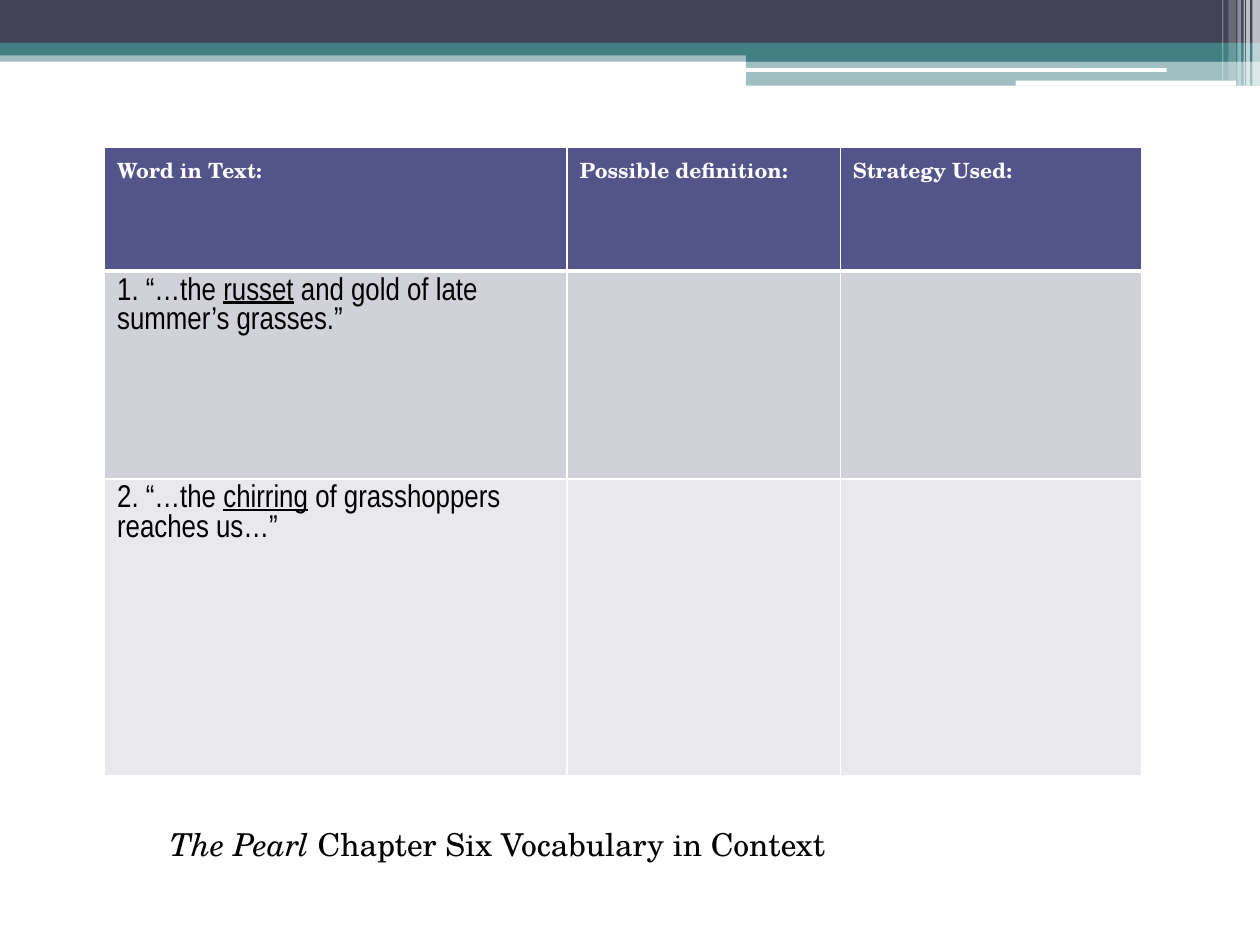
import pptx
import pptx.util
import pptx.dml.color
import pptx.enum.shapes
import pptx.oxml.ns
import lxml.etree

SERIF, NARROW = "TeX Gyre Schola", "Arial Narrow"
WHITE, BLACK, TEAL, SLATE = "FFFFFF", "000000", "438086", "424456"
WIDTH, HEIGHT = 10, 7.5
SPLIT = 5.92

BANDS = [
    ("RECTANGLE", 0, 0.4, WIDTH, 0.09, TEAL, 50),
    ("RECTANGLE", 0, 0, WIDTH, 0.34, SLATE, 100),
    ("RECTANGLE", 0, 0.34, WIDTH, 0.1, TEAL, 100),
    ("RECTANGLE", SPLIT, 0.39, WIDTH - SPLIT, 0.1, TEAL, 100),
    ("RECTANGLE", SPLIT, 0.48, WIDTH - SPLIT, 0.2, TEAL, 50),
    ("ROUNDED_RECTANGLE", 5.91, 0.54, 3.35, 0.03, WHITE, 100),
    ("ROUNDED_RECTANGLE", 8.06, 0.64, 1.75, 0.04, WHITE, 100),
]
STRIPES = [
    (9.94, 0.06, 0.68, 65),
    (9.89, 0.03, 0.68, 65),
    (9.87, 0.01, 0.68, 60),
    (9.82, 0.03, 0.68, 40),
    (9.75, 0.06, 0.64, 20),
    (9.7, 0.01, 0.64, 30),
]

HEADERS = ["Word in Text:", "Possible definition:", "Strategy Used:"]
QUOTES = [
    ("1. “…the ", "russet", " and gold of late summer’s grasses.”"),
    ("2. “…the ", "chirring", " of grasshoppers reaches us…”"),
]
COLUMNS = [3.67, 2.17, 2.39]
ROWS = [0.98, 1.65, 2.36]
ROW_FILLS = ["53548A", "D1D1DA", "E9E9ED"]


def color(value):
    return pptx.dml.color.RGBColor.from_string(value)


def paint(fill, value, alpha=100):
    fill.solid()
    fill.fore_color.rgb = color(value)
    if alpha < 100:
        clr = fill._xPr.find(".//" + pptx.oxml.ns.qn("a:srgbClr"))
        lxml.etree.SubElement(clr, pptx.oxml.ns.qn("a:alpha"), val=str(alpha * 1000))


def add_text(p, text, font=SERIF, size=18, fill=BLACK, bold=False, italic=False, underline=False):
    r = p.add_run()
    r.text = text
    f = r.font
    f.name, f.size, f.color.rgb = font, pptx.util.Pt(size), color(fill)
    f.bold, f.italic, f.underline = bold, italic, underline


def add_band(slide, kind, x, y, w, h, fill, alpha):
    sp = slide.shapes.add_shape(
        pptx.enum.shapes.MSO_SHAPE[kind], *map(pptx.util.Inches, (x, y, w, h)))
    sp.shadow.inherit = False
    sp.line.fill.background()
    paint(sp.fill, fill, alpha)


def add_border(cell, side, points):
    ln = lxml.etree.SubElement(cell._tc.get_or_add_tcPr(), pptx.oxml.ns.qn("a:ln" + side),
                               w=str(pptx.util.Pt(points)))
    solid = lxml.etree.SubElement(ln, pptx.oxml.ns.qn("a:solidFill"))
    lxml.etree.SubElement(solid, pptx.oxml.ns.qn("a:srgbClr"), val=WHITE)


def add_vocabulary_table(slide):
    box = (0.83, 1.17, sum(COLUMNS), sum(ROWS))
    table = slide.shapes.add_table(
        len(ROWS), len(COLUMNS), *map(pptx.util.Inches, box)).table
    for column, width in zip(table.columns, COLUMNS):
        column.width = pptx.util.Inches(width)
    for i, (row, height) in enumerate(zip(table.rows, ROWS)):
        row.height = pptx.util.Inches(height)
        for cell in row.cells:
            for side in "LRTB":
                thick = (i, side) in ((0, "B"), (1, "T"))
                add_border(cell, side, 3 if thick else 1)
            paint(cell.fill, ROW_FILLS[i])
    for j, header in enumerate(HEADERS):
        add_text(table.cell(0, j).text_frame.paragraphs[0], header,
                 size=12, fill=WHITE, bold=True)
    for i, quote in enumerate(QUOTES, 1):
        p = table.cell(i, 0).text_frame.paragraphs[0]
        for k, part in enumerate(quote):
            add_text(p, part, font=NARROW, underline=k == 1)


def add_caption(slide):
    tf = slide.shapes.add_textbox(*map(pptx.util.Inches, (1.25, 6.5, 7.25, 0.4))).text_frame
    tf.word_wrap = True
    p = tf.paragraphs[0]
    add_text(p, "The Pearl ", italic=True)
    add_text(p, "Chapter Six Vocabulary in Context")


def main():
    prs = pptx.Presentation()
    prs.slide_width, prs.slide_height = pptx.util.Inches(WIDTH), pptx.util.Inches(HEIGHT)
    slide = prs.slides.add_slide(prs.slide_layouts[6])
    for band in BANDS:
        add_band(slide, *band)
    for x, w, h, alpha in STRIPES:
        add_band(slide, "RECTANGLE", x, 0, w, h, WHITE, alpha)
    add_vocabulary_table(slide)
    add_caption(slide)
    prs.save("out.pptx")


if __name__ == "__main__":
    main()
